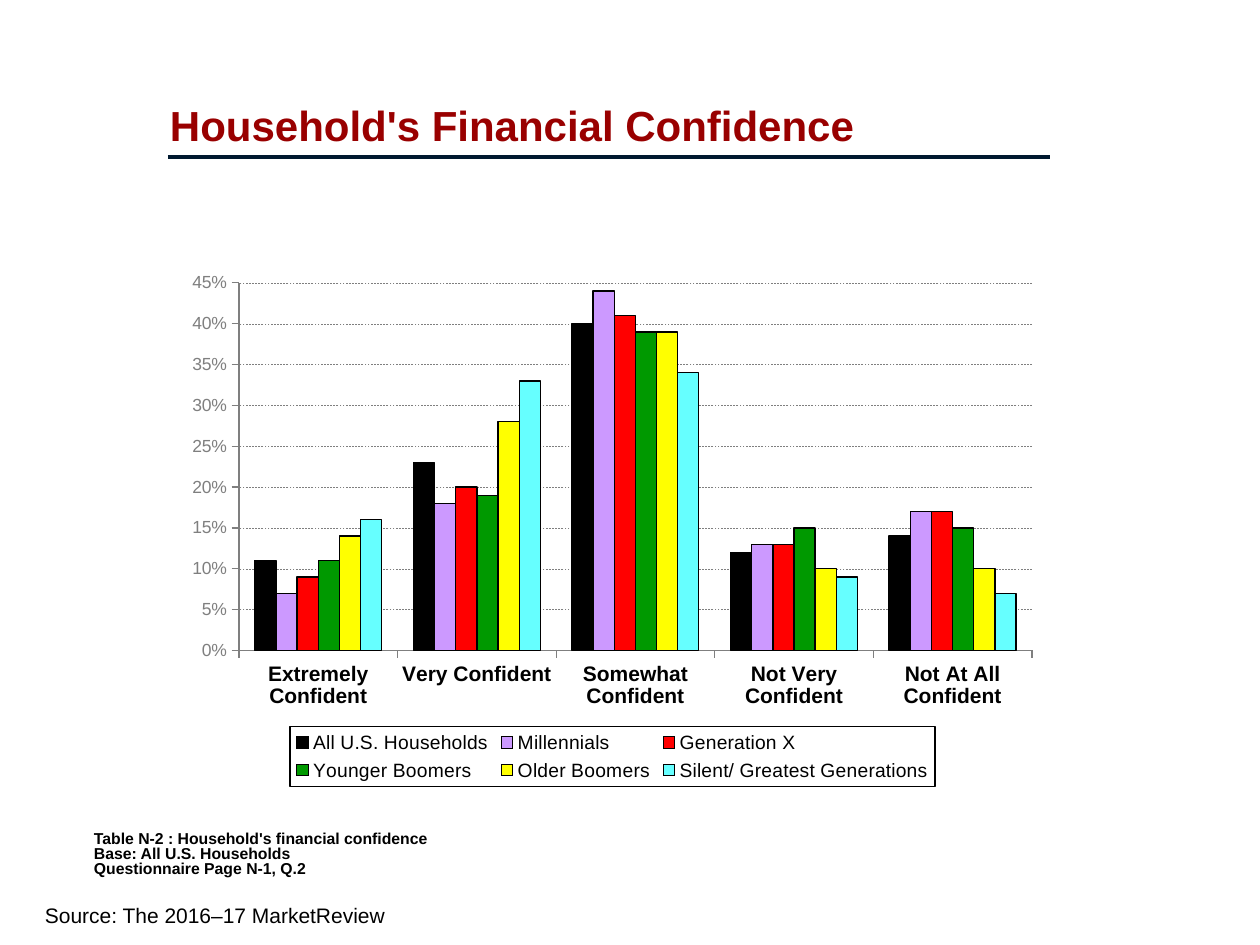
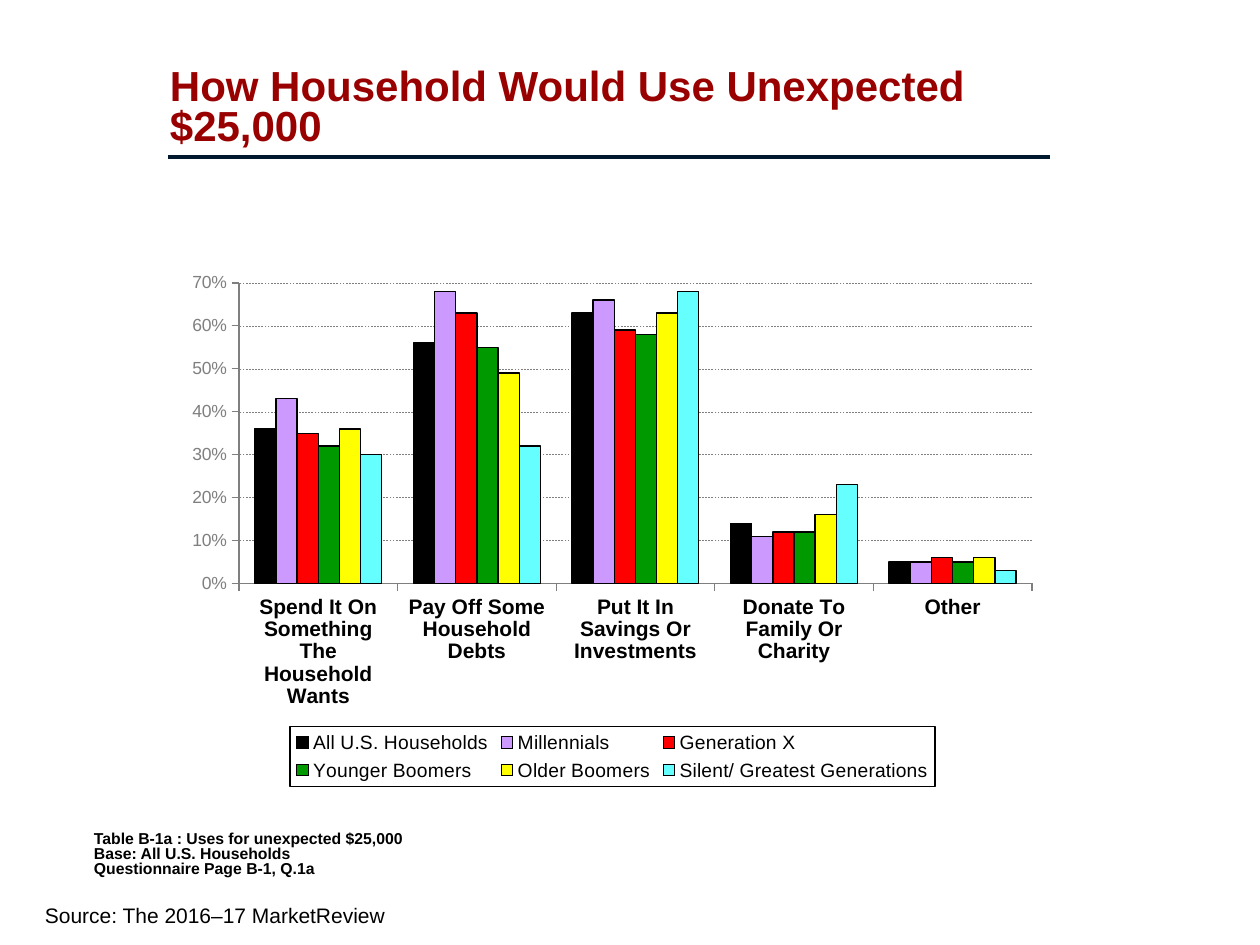
"""Build two column chart slides on household finances."""
from dataclasses import dataclass

from lxml import etree
from pptx import Presentation
from pptx.chart.data import CategoryChartData
from pptx.dml.color import RGBColor
from pptx.enum.chart import XL_CHART_TYPE, XL_LEGEND_POSITION, XL_TICK_MARK
from pptx.enum.dml import MSO_LINE
from pptx.enum.shapes import MSO_CONNECTOR
from pptx.enum.text import MSO_ANCHOR
from pptx.oxml import parse_xml
from pptx.oxml.ns import nsdecls, qn
from pptx.util import Pt

COLUMNS = XL_CHART_TYPE.COLUMN_CLUSTERED
LEGEND_BOTTOM = XL_LEGEND_POSITION.BOTTOM
TICK_OUTSIDE = XL_TICK_MARK.OUTSIDE
DASH = MSO_LINE.DASH
STRAIGHT = MSO_CONNECTOR.STRAIGHT
TOP, BOTTOM = MSO_ANCHOR.TOP, MSO_ANCHOR.BOTTOM

SOURCE = "Source: The 2016–17 MarketReview"
GENERATIONS = [
    ("All U.S. Households", "000000"),
    ("Millennials", "CC99FF"),
    ("Generation X", "FF0000"),
    ("Younger Boomers", "009900"),
    ("Older Boomers", "FFFF00"),
    ("Silent/ Greatest Generations", "66FFFF"),
]
SLIDES = [
    {
        "title": "Household's Financial Confidence",
        "notes": ["Table N-2 : Household's financial confidence",
                  "Base: All U.S. Households",
                  "Questionnaire Page N-1, Q.2"],
        "categories": ["Extremely Confident", "Very Confident", "Somewhat Confident",
                       "Not Very Confident", "Not At All Confident"],
        "values": [
            (0.11, 0.23, 0.40, 0.12, 0.14),
            (0.07, 0.18, 0.44, 0.13, 0.17),
            (0.09, 0.20, 0.41, 0.13, 0.17),
            (0.11, 0.19, 0.39, 0.15, 0.15),
            (0.14, 0.28, 0.39, 0.10, 0.10),
            (0.16, 0.33, 0.34, 0.09, 0.07),
        ],
        "maximum": 0.45,
        "step": 0.05,
        "plot_bottom": 651,
    },
    {
        "title": "How Household Would Use Unexpected $25,000",
        "notes": ["Table B-1a : Uses for unexpected $25,000",
                  "Base: All U.S. Households",
                  "Questionnaire Page B-1, Q.1a"],
        "categories": ["Spend It On Something The Household Wants",
                       "Pay Off Some Household Debts",
                       "Put It In Savings Or Investments",
                       "Donate To Family Or Charity", "Other"],
        "values": [
            (0.36, 0.56, 0.63, 0.14, 0.05),
            (0.43, 0.68, 0.66, 0.11, 0.05),
            (0.35, 0.63, 0.59, 0.12, 0.06),
            (0.32, 0.55, 0.58, 0.12, 0.05),
            (0.36, 0.49, 0.63, 0.16, 0.06),
            (0.30, 0.32, 0.68, 0.23, 0.03),
        ],
        "maximum": 0.7,
        "step": 0.1,
        "plot_bottom": 584,
    },
]


@dataclass(frozen=True)
class Theme:
    """Colours, font and type sizes."""
    font: str = "Arial"
    title: str = "990000"
    rule: str = "00192F"
    text: str = "000000"
    axis: str = "7F7F7F"
    title_size: int = 24
    source_size: int = 12
    category_size: int = 12
    legend_size: int = 11
    axis_size: int = 10
    note_size: int = 9


THEME = Theme()
PX_PER_INCH = 126
SLIDE_SIZE = (1260, 945)
TITLE_BOX = (170, 67, 883, 89)
RULE = (168, 157, 1050, 157)
CHART_BOX = (175, 262, 874, 525)
PLOT_LEFT, PLOT_TOP, PLOT_RIGHT = 239, 283, 1032
LEGEND_BOX = (290, 727, 645, 60)
NOTE_BOX = (44, 800, 1111, 94)
SOURCE_BOX = (32, 897, 1124, 38)


def px(length):
    """Turn pixels into EMU."""
    return round(length * 914400 / PX_PER_INCH)


def set_font(font, size, color, bold=False):
    """Apply the shared typeface with a size, colour and weight."""
    formats = {"name": THEME.font, "size": Pt(size), "bold": bold}
    for name, value in formats.items():
        setattr(font, name, value)
    font.color.rgb = RGBColor.from_string(color)


def set_line(line, color, width):
    """Give a line its colour and width in points."""
    line.color.rgb = RGBColor.from_string(color)
    line.width = Pt(width)


def add_text(slide, box, lines, font, insets, anchor=BOTTOM, spacing=0.8):
    """Add a text box with one paragraph for each line."""
    frame = slide.shapes.add_textbox(*map(px, box)).text_frame
    sides = ("margin_left", "margin_top", "margin_right", "margin_bottom")
    formats = {"word_wrap": True, "vertical_anchor": anchor,
               **dict(zip(sides, map(px, insets)))}
    for name, value in formats.items():
        setattr(frame, name, value)
    for index, line in enumerate(lines):
        paragraph = frame.add_paragraph() if index else frame.paragraphs[0]
        paragraph.line_spacing = spacing
        run = paragraph.add_run()
        run.text = line
        set_font(run.font, *font)


def add_rule(slide):
    """Draw the line under the title."""
    rule = slide.shapes.add_connector(STRAIGHT, *map(px, RULE))
    set_line(rule.line, THEME.rule, 2)
    etree.SubElement(rule._element.spPr, qn("a:effectLst"))


def place_part(part, index, box, target=""):
    """Fix a chart part at a slide position."""
    for layout in part.findall(qn("c:layout")):
        part.remove(layout)
    left, top, width, height = CHART_BOX
    fractions = {"x": (box[0] - left) / width, "y": (box[1] - top) / height,
                 "w": box[2] / width, "h": box[3] / height}
    modes = '<c:xMode val="edge"/><c:yMode val="edge"/>'
    sizes = "".join(f'<c:{name} val="{value:.4f}"/>' for name, value in fractions.items())
    part.insert(index, parse_xml(
        f'<c:layout {nsdecls("c")}><c:manualLayout>{target}{modes}{sizes}'
        "</c:manualLayout></c:layout>"))


def style_axes(chart, content):
    """Format both axes and the gridlines."""
    value_axis, category_axis = chart.value_axis, chart.category_axis
    formats = {"minimum_scale": 0, "maximum_scale": content["maximum"],
               "major_unit": content["step"], "has_major_gridlines": True}
    for name, value in formats.items():
        setattr(value_axis, name, value)
    for axis in (value_axis, category_axis):
        axis.major_tick_mark = TICK_OUTSIDE
        set_line(axis.format.line, THEME.axis, 0.75)
    set_line(value_axis.major_gridlines.format.line, THEME.axis, 0.25)
    value_axis.major_gridlines.format.line.dash_style = DASH
    value_axis.tick_labels.number_format = "0%"
    value_axis.tick_labels.number_format_is_linked = False
    set_font(value_axis.tick_labels.font, THEME.axis_size, THEME.axis)
    set_font(category_axis.tick_labels.font, THEME.category_size, THEME.text, True)


def style_legend(chart):
    """Place the framed legend below the plot."""
    chart.has_legend = True
    legend = chart.legend
    legend.position = LEGEND_BOTTOM
    legend.include_in_layout = False
    set_font(legend.font, THEME.legend_size, THEME.text)
    element = legend._element
    place_part(element, 1, LEGEND_BOX)
    element.find(qn("c:txPr")).addprevious(parse_xml(
        f'<c:spPr {nsdecls("c", "a")}><a:ln w="{Pt(0.75)}"><a:solidFill>'
        f'<a:srgbClr val="{THEME.text}"/></a:solidFill></a:ln></c:spPr>'))


def add_generation_chart(slide, content):
    """Add the columns comparing generations."""
    data = CategoryChartData(number_format="0%")
    data.categories = content["categories"]
    for (name, _), values in zip(GENERATIONS, content["values"]):
        data.add_series(name, values)
    chart = slide.shapes.add_chart(COLUMNS, *map(px, CHART_BOX), data).chart
    chart.has_title = False
    set_font(chart.font, THEME.axis_size, THEME.text)
    plot = chart.plots[0]
    for name, value in {"gap_width": 150, "overlap": 0, "vary_by_categories": False}.items():
        setattr(plot, name, value)
    for series, (_, color) in zip(plot.series, GENERATIONS):
        series.invert_if_negative = False
        series.format.fill.solid()
        series.format.fill.fore_color.rgb = RGBColor.from_string(color)
        set_line(series.format.line, THEME.text, 0.75)
    style_axes(chart, content)
    style_legend(chart)
    plot_box = (PLOT_LEFT, PLOT_TOP, PLOT_RIGHT - PLOT_LEFT,
                content["plot_bottom"] - PLOT_TOP)
    plot_area = chart._chartSpace.find(qn("c:chart")).find(qn("c:plotArea"))
    place_part(plot_area, 0, plot_box, '<c:layoutTarget val="inner"/>')


def main():
    """Build and save the presentation."""
    presentation = Presentation()
    presentation.slide_width, presentation.slide_height = map(px, SLIDE_SIZE)
    for content in SLIDES:
        slide = presentation.slides.add_slide(presentation.slide_layouts[6])
        add_text(slide, SOURCE_BOX, [SOURCE], (THEME.source_size, THEME.text),
                 (13, 6, 13, 6), TOP, 1.0)
        add_rule(slide)
        add_text(slide, TITLE_BOX, [content["title"]],
                 (THEME.title_size, THEME.title, True), (0, 0, 0, 6))
        add_generation_chart(slide, content)
        add_text(slide, NOTE_BOX, content["notes"],
                 (THEME.note_size, THEME.text, True), (50, 16, 0, 16))
    presentation.save("out.pptx")


if __name__ == "__main__":
    main()
